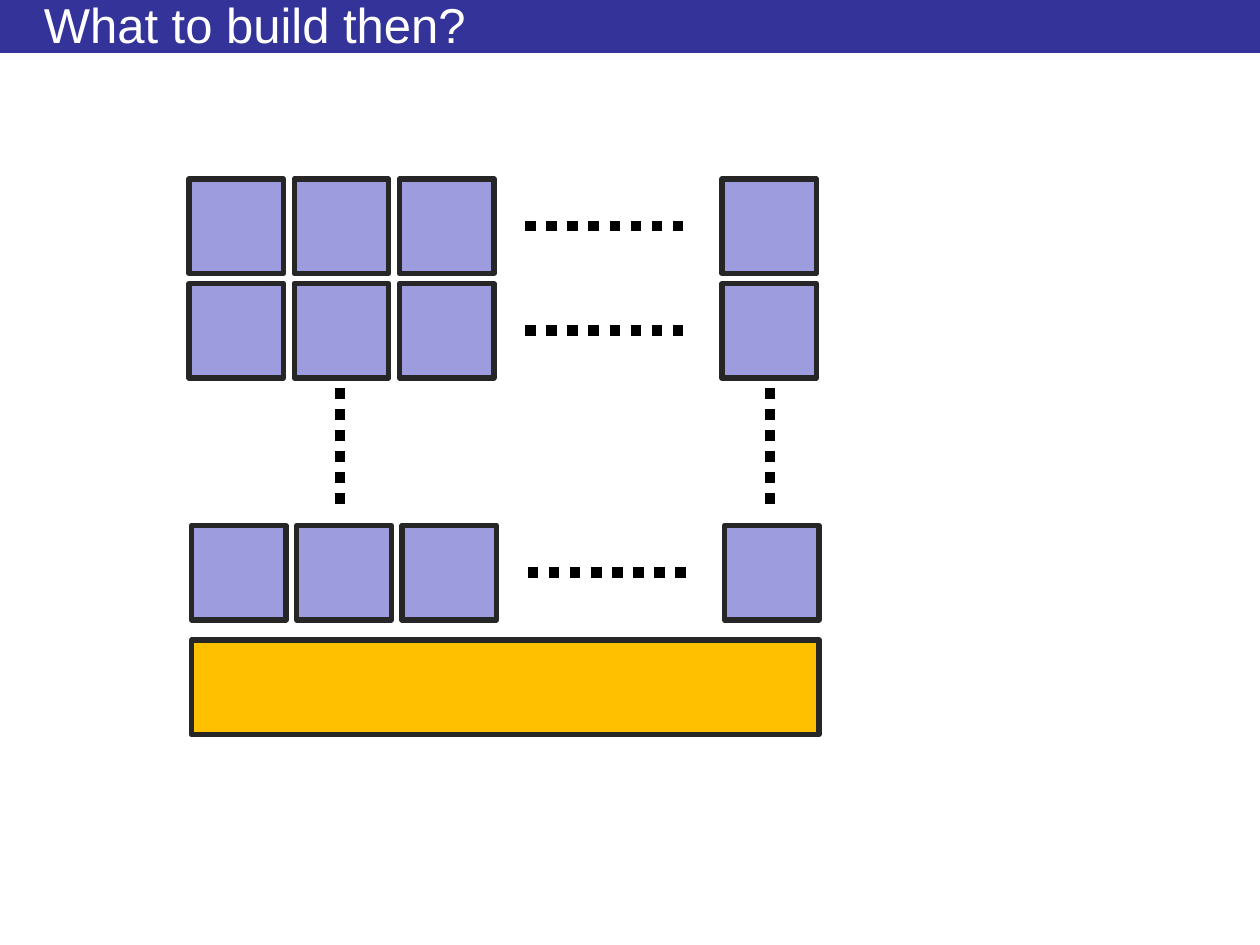
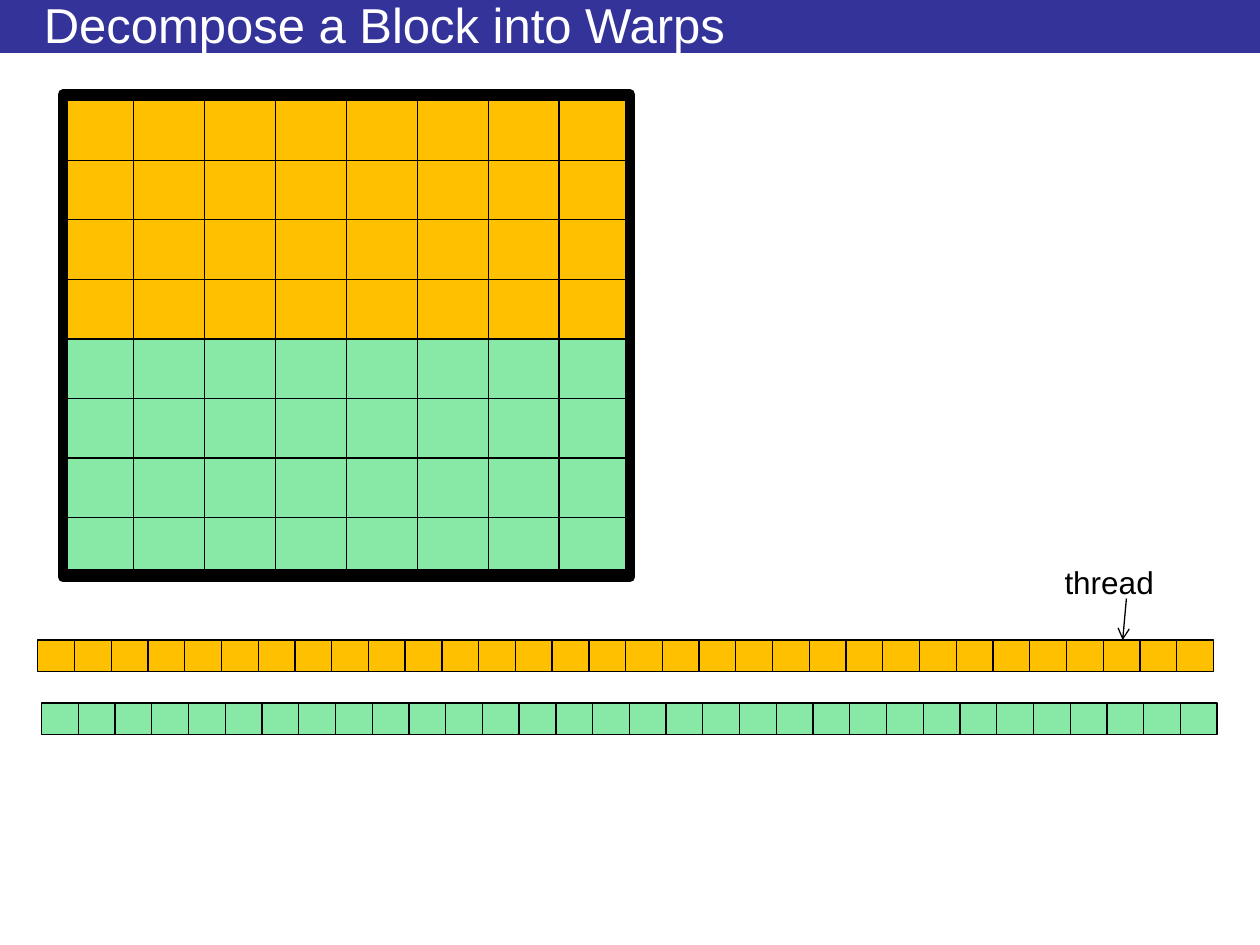
from itertools import product

from lxml.etree import SubElement
from pptx import Presentation
from pptx.dml.color import RGBColor
from pptx.enum.dml import MSO_LINE
from pptx.enum.shapes import MSO_CONNECTOR, MSO_SHAPE
from pptx.enum.text import MSO_ANCHOR, MSO_AUTO_SIZE
from pptx.oxml.ns import qn
from pptx.util import Inches, Pt

COLORS = {
    "band": "333399",
    "title": "FFFFFF",
    "text": "000000",
    "line": "000000",
    "tile": "9C9CDF",
    "tile_line": "262626",
    "amber": "FFC000",
    "green": "88E8A6",
}
FONT = "Arial"
TITLE_BOX = (0.25, 0.05, 9.25, 0.28)
TILE = 0.75
TILE_PITCH = 0.835
LAST_TILE = 4.23
WARP_SIZE = 32


def color(name):
    return RGBColor.from_string(COLORS[name])


def set_values(target, values):
    for name, value in values.items():
        setattr(target, name, value)


def add_box(shapes, box, fill=None, line="line", width=0.75):
    shape = shapes.add_shape(MSO_SHAPE.RECTANGLE, *map(Inches, box))
    shape.shadow.inherit = False
    if fill:
        shape.fill.solid()
        shape.fill.fore_color.rgb = color(fill)
    else:
        shape.fill.background()
    if line:
        shape.line.color.rgb = color(line)
        shape.line.width = Pt(width)
    else:
        shape.line.fill.background()
    return shape


def add_line(shapes, start, end, width, dash=None, arrow=False):
    connector = shapes.add_connector(MSO_CONNECTOR.STRAIGHT, *map(Inches, start + end))
    connector.line.color.rgb = color("line")
    connector.line.width = Pt(width)
    if dash:
        connector.line.dash_style = dash
    if arrow:
        SubElement(connector.line._get_or_add_ln(), qn("a:tailEnd"), type="arrow")
    SubElement(connector._element.spPr, qn("a:effectLst"))


def add_text(shapes, box, text, size, text_color, **frame_values):
    frame = shapes.add_textbox(*map(Inches, box)).text_frame
    set_values(frame, frame_values)
    run = frame.paragraphs[0].add_run()
    run.text = text
    set_values(run.font, {"name": FONT, "size": Pt(size)})
    run.font.color.rgb = color(text_color)


def add_titled_slide(presentation, title):
    slide = presentation.slides.add_slide(presentation.slide_layouts[6])
    add_box(slide.shapes, (0, 0, 10, 0.42), "band", line=None)
    add_text(slide.shapes, TITLE_BOX, title, 28, "title", word_wrap=True,
             auto_size=MSO_AUTO_SIZE.NONE, vertical_anchor=MSO_ANCHOR.MIDDLE,
             margin_top=0, margin_bottom=0)
    return slide


def add_tile_row(shapes, left, top):
    """Three tiles, a dotted line and the last tile."""
    for offset in (0, TILE_PITCH, 2 * TILE_PITCH, LAST_TILE):
        add_box(shapes, (left + offset, top, TILE, TILE), "tile", "tile_line", 3)
    middle = top + TILE / 2
    add_line(shapes, (left + 2.67, middle), (left + 4, middle), 6, MSO_LINE.ROUND_DOT)


def add_block(shapes, left, top, width, height):
    """An 8 x 8 grid of threads, one colour for each warp."""
    half = height / 2
    add_box(shapes, (left, top + half, width, half), "green")
    add_box(shapes, (left, top, width, half), "amber")

    # Outlines on every second column and row draw all the grid lines
    grid = shapes.add_group_shape().shapes
    add_box(grid, (left, top - 0.05, width, height), width=2.25)
    column, row = width / 8, height / 8
    for index in range(0, 8, 2):
        add_box(grid, (left + index * column, top, column, height))
    for index in range(1, 8, 2):
        add_box(grid, (left, top + index * row, width, row))

    # Heavy frame
    add_box(shapes, (left, top - 0.05, width, height + 0.05), width=6)


def add_warp(shapes, left, top, width, height, fill):
    """One warp as a strip of threads."""
    strip = shapes.add_group_shape().shapes
    cell = width / WARP_SIZE
    for index in range(WARP_SIZE):
        add_box(strip, (left + index * cell, top, cell, height), fill)


def build_tiles_slide(presentation):
    shapes = add_titled_slide(presentation, "What to build then?").shapes
    for left, top in ((1.5, 1.42), (1.5, 2.25), (1.52, 4.17)):
        add_tile_row(shapes, left, top)
    # Skipped rows
    for x in (2.7, 6.11):
        add_line(shapes, (x, 3.08), (x, 4.04), 6, MSO_LINE.ROUND_DOT)
    # Base bar
    add_box(shapes, (1.52, 5.08, LAST_TILE + TILE, TILE), "amber", "tile_line", 3)


def build_warps_slide(presentation):
    shapes = add_titled_slide(presentation, "Decompose a Block into Warps").shapes
    add_block(shapes, 0.5, 0.8, 4.5, 3.78)
    add_warp(shapes, 0.3, 5.08, 9.33, 0.25, "amber")
    add_warp(shapes, 0.33, 5.58, 9.33, 0.25, "green")
    # Thread label
    add_text(shapes, (8.35, 4.42, 0.92, 0.4), "thread", 18, "text",
             word_wrap=False, auto_size=MSO_AUTO_SIZE.SHAPE_TO_FIT_TEXT)
    add_line(shapes, (8.94, 4.75), (8.91, 5.08), 0.75, arrow=True)


def main():
    presentation = Presentation()
    set_values(presentation, {"slide_width": Inches(10), "slide_height": Inches(7.5)})
    build_tiles_slide(presentation)
    build_warps_slide(presentation)
    presentation.save("out.pptx")


if __name__ == "__main__":
    main()
